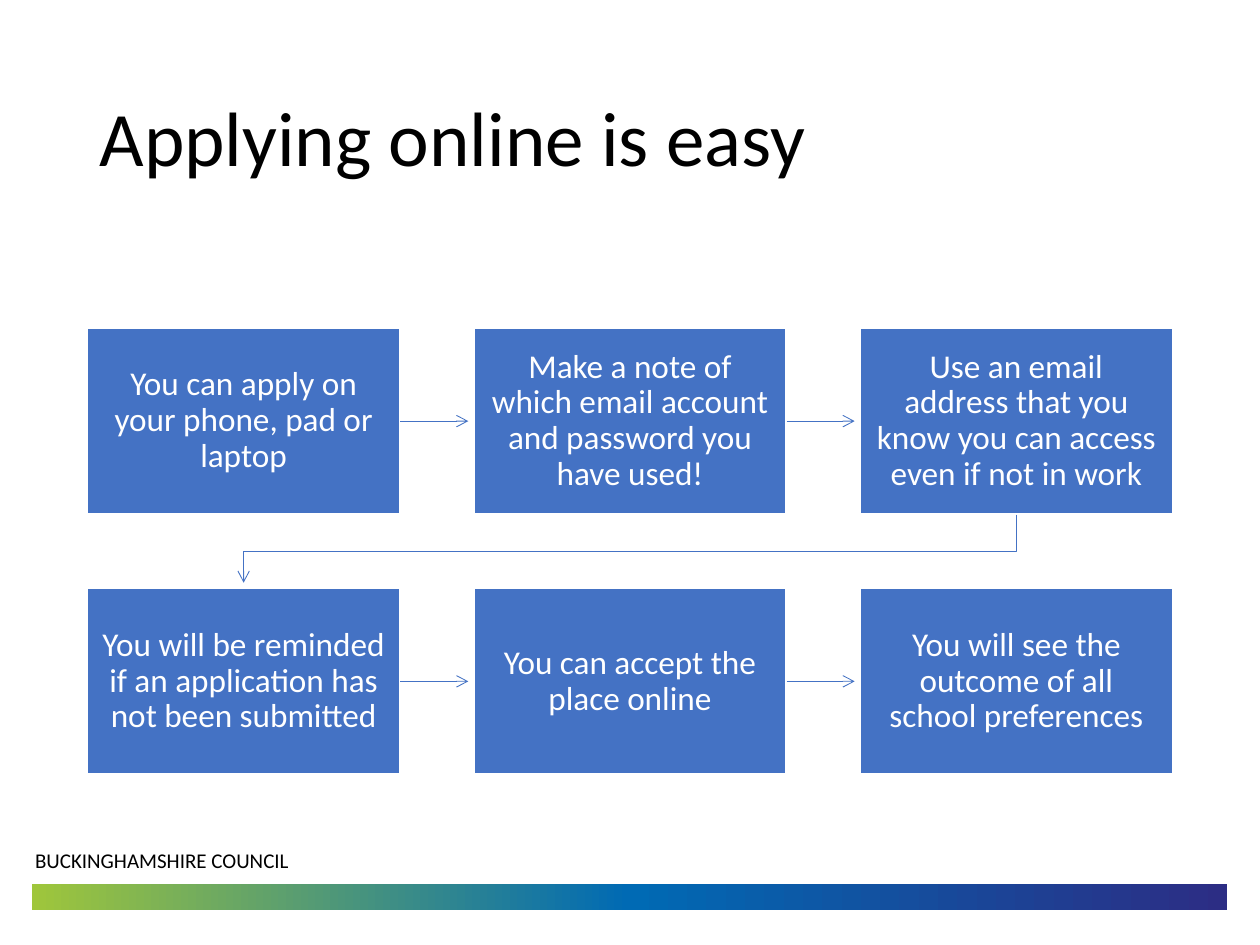
from copy import deepcopy
from dataclasses import dataclass

from lxml import etree
from pptx import Presentation
from pptx.dml.color import RGBColor
from pptx.enum.shapes import MSO_CONNECTOR, MSO_SHAPE
from pptx.enum.text import MSO_ANCHOR, MSO_AUTO_SIZE, PP_ALIGN
from pptx.oxml.ns import qn
from pptx.util import Inches, Pt

RECTANGLE = MSO_SHAPE.RECTANGLE
STRAIGHT = MSO_CONNECTOR.STRAIGHT
MIDDLE = MSO_ANCHOR.MIDDLE
LEFT, CENTER = PP_ALIGN.LEFT, PP_ALIGN.CENTER
RIGHT_SIDE = 3
TITLE_ONLY = 5


@dataclass(frozen=True)
class Theme:
    font: str = "Calibri"
    ink: RGBColor = RGBColor(0, 0, 0)
    paper: RGBColor = RGBColor(255, 255, 255)
    step: RGBColor = RGBColor.from_string("4472C4")
    band: tuple = ("9FC63B", "006AB4", "2C2D84")
    title_size: int = 44
    step_size: int = 19
    footer_size: int = 12


THEME = Theme()

STEPS = [
    ["You can apply on your phone, pad or laptop",
     "Make a note of which email account and password you have used!",
     "Use an email address that you know you can access even if not in work"],
    ["You will be reminded if an application has not been submitted",
     "You can accept the place online",
     "You will see the outcome of all school preferences"],
]


def set_text(frame, text, size, color, align):
    frame.text = text
    frame.word_wrap = True
    paragraph = frame.paragraphs[0]
    paragraph.alignment = align
    paragraph.font.name = THEME.font
    paragraph.font.size = Pt(size)
    paragraph.font.color.rgb = color
    return paragraph


def style_arrow(arrow):
    arrow.line.color.rgb = THEME.step
    arrow.line.width = Pt(0.5)
    etree.SubElement(arrow.line._get_or_add_ln(), qn("a:tailEnd"), type="arrow")


def add_title(slide, box, text):
    title = slide.shapes.title
    title.left, title.top, title.width, title.height = box
    frame = title.text_frame
    frame.auto_size = MSO_AUTO_SIZE.NONE
    frame.vertical_anchor = MIDDLE
    set_text(frame, text, THEME.title_size, THEME.ink, LEFT).line_spacing = 0.9


def add_footer(slide, box, text):
    """Place the council name above a gradient band, within the box."""
    left, top, width, height = box
    band_height = Inches(0.2)
    band = slide.shapes.add_shape(
        RECTANGLE, left, top + height - band_height, width, band_height)
    band.shadow.inherit = False
    band.line.fill.background()
    band.fill.gradient()
    band.fill.gradient_angle = 0
    stop_list = band.element.find(".//" + qn("a:gsLst"))
    stop_list.insert(1, deepcopy(stop_list[0]))
    for index, (stop, color) in enumerate(zip(band.fill.gradient_stops, THEME.band)):
        stop.color.rgb = RGBColor.from_string(color)
        stop.position = index / (len(THEME.band) - 1)

    label = slide.shapes.add_textbox(
        left - Inches(0.07), top, width // 2, Inches(0.3))
    set_text(label.text_frame, text, THEME.footer_size, THEME.ink, LEFT)


def add_step(slide, box, text):
    step = slide.shapes.add_shape(RECTANGLE, *box)
    step.shadow.inherit = False
    step.fill.solid()
    step.fill.fore_color.rgb = THEME.step
    step.line.color.rgb = THEME.paper
    step.line.width = Pt(1.5)
    frame = step.text_frame
    frame.margin_left = frame.margin_right = Inches(0.12)
    frame.margin_top = frame.margin_bottom = Inches(0.13)
    frame.vertical_anchor = MIDDLE
    set_text(frame, text, THEME.step_size, THEME.paper, CENTER).line_spacing = 0.9
    return step


def join_across(slide, step, following, clearance):
    middle = step.top + step.height // 2
    arrow = slide.shapes.add_connector(
        STRAIGHT, step.left + step.width, middle, following.left - clearance, middle)
    arrow.begin_connect(step, RIGHT_SIDE)
    etree.SubElement(arrow.element.spPr, qn("a:effectLst"))
    style_arrow(arrow)


def join_rows(slide, last, first, clearance):
    """Lead from the end of one row down to the start of the next."""
    start_x = last.left + last.width // 2
    end_x = first.left + first.width // 2
    bottom = last.top + last.height
    turn = (bottom + first.top) // 2
    builder = slide.shapes.build_freeform(start_x, bottom)
    builder.add_line_segments(
        [(start_x, turn), (end_x, turn), (end_x, first.top - clearance)], close=False)
    arrow = builder.convert_to_shape()
    arrow.shadow.inherit = False
    arrow.fill.background()
    style_arrow(arrow)


def add_process(slide, box, rows):
    left, top, width, height = box
    gap = Inches(0.58)
    clearance = Inches(0.04)
    columns = len(rows[0])
    step_width = (width - gap * (columns - 1)) // columns
    step_height = (height - gap * (len(rows) - 1)) // len(rows)
    grid = [
        [add_step(slide, (left + column * (step_width + gap),
                          top + row * (step_height + gap),
                          step_width, step_height), text)
         for column, text in enumerate(texts)]
        for row, texts in enumerate(rows)]
    for steps in grid:
        for step, following in zip(steps, steps[1:]):
            join_across(slide, step, following, clearance)
    for upper, lower in zip(grid, grid[1:]):
        join_rows(slide, upper[-1], lower[0], clearance)


def main():
    deck = Presentation()
    deck.slide_width, deck.slide_height = Inches(10), Inches(7.5)
    slide = deck.slides.add_slide(deck.slide_layouts[TITLE_ONLY])
    margin = Inches(0.69)
    content_width = deck.slide_width - 2 * margin
    add_footer(slide, (Inches(0.25), Inches(6.68), Inches(9.49), Inches(0.54)),
               "BUCKINGHAMSHIRE COUNCIL")
    add_title(slide, (margin, Inches(0.4), content_width, Inches(1.45)),
              "Applying online is easy")
    add_process(slide, (margin, Inches(2.6), content_width, Inches(3.55)), STEPS)
    deck.save("out.pptx")


if __name__ == "__main__":
    main()
